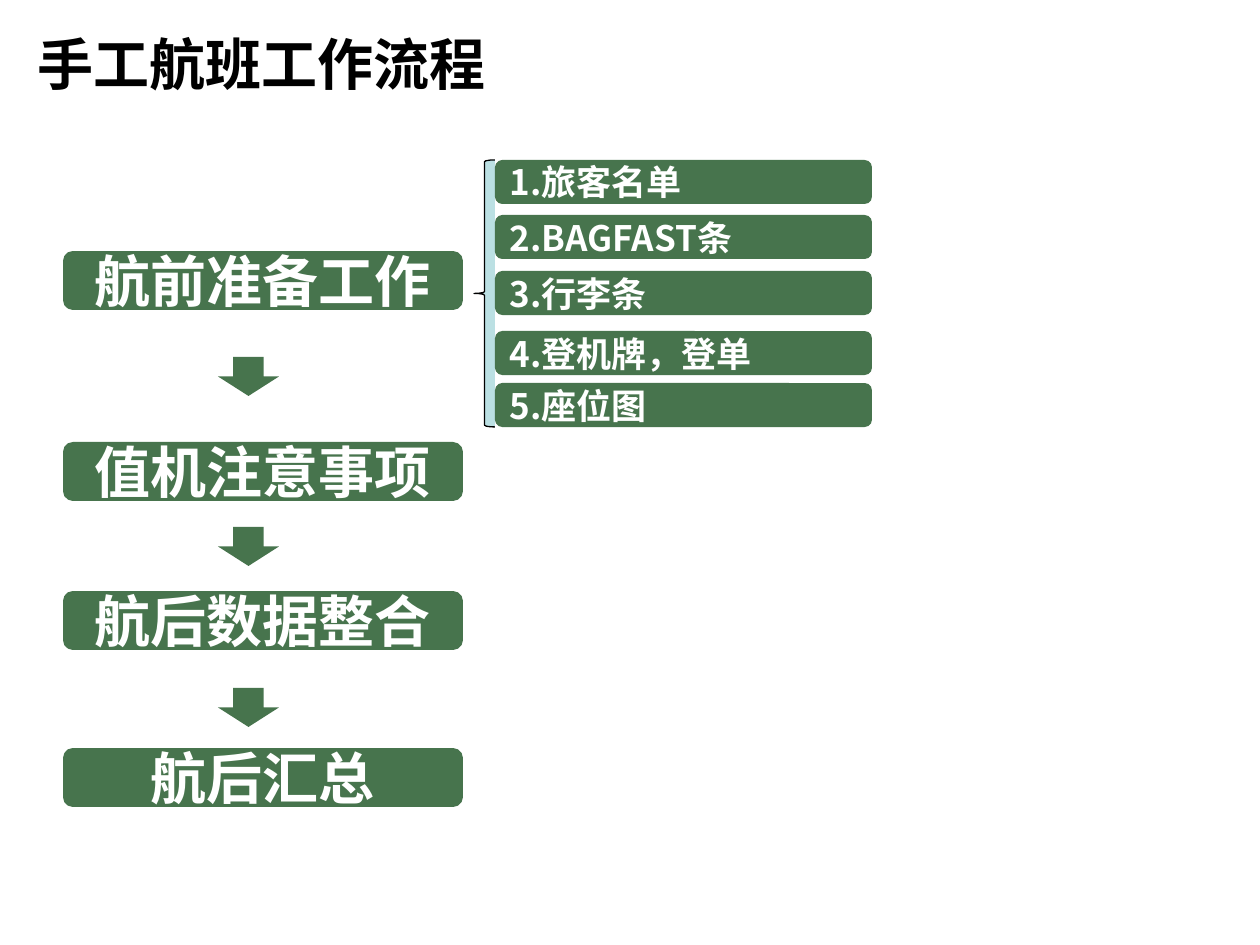
from dataclasses import dataclass

from lxml.etree import SubElement
from pptx import Presentation
from pptx.dml.color import RGBColor
from pptx.enum.shapes import MSO_SHAPE as Shape
from pptx.enum.text import MSO_ANCHOR as Anchor, MSO_AUTO_SIZE as AutoSize, PP_ALIGN as Align
from pptx.oxml.ns import qn
from pptx.util import Emu, Pt

EMU_PER_PX = 914400 / 126
FONT = "Noto Sans CJK SC"
COLORS = {"green": "47744D", "pale": "BBE0E3", "black": "000000", "white": "FFFFFF"}


@dataclass(frozen=True)
class Box:
    left: int
    top: int
    width: int
    height: int


@dataclass(frozen=True)
class Label:
    text: str
    size: int
    color: str = "white"
    align: Align = Align.LEFT
    anchor: Anchor = Anchor.MIDDLE


@dataclass(frozen=True)
class Item:
    text: str
    top: int


TITLE = Label("手工航班工作流程", 32, "black", anchor=Anchor.TOP)
STAGES = [
    Item("航前准备工作", 251),
    Item("值机注意事项", 442),
    Item("航后数据整合", 591),
    Item("航后汇总", 748),
]
ARROW_TOPS = [357, 527, 688]
DOCUMENTS = [
    Item("1.旅客名单", 160),
    Item("2.BAGFAST条", 215),
    Item("3.行李条", 271),
    Item("4.登机牌，登单", 331),
    Item("5.座位图", 383),
]


def px(length: int) -> Emu:
    return Emu(round(length * EMU_PER_PX))


def place(box: Box) -> list[Emu]:
    return [px(length) for length in (box.left, box.top, box.width, box.height)]


def color(name: str) -> RGBColor:
    return RGBColor.from_string(COLORS[name])


def write_label(shape, label: Label) -> None:
    frame = shape.text_frame
    frame.word_wrap = True
    frame.vertical_anchor = label.anchor
    paragraph = frame.paragraphs[0]
    paragraph.alignment = label.align
    run = paragraph.add_run()
    run.text = label.text
    formats = {"name": FONT, "size": Pt(label.size), "bold": True}
    for attribute, value in formats.items():
        setattr(run.font, attribute, value)
    run.font.color.rgb = color(label.color)
    SubElement(run._r.get_or_add_rPr(), qn("a:ea"), typeface=FONT)


def draw_shape(slide, kind: Shape, box: Box, fill: str = "green"):
    shape = slide.shapes.add_shape(kind, *place(box))
    shape.shadow.inherit = False
    shape.fill.solid()
    shape.fill.fore_color.rgb = color(fill)
    shape.line.fill.background()
    return shape


def draw_process(slide, box: Box, label: Label) -> None:
    write_label(draw_shape(slide, Shape.FLOWCHART_ALTERNATE_PROCESS, box), label)


def draw_title(slide, box: Box, label: Label) -> None:
    title = slide.shapes.add_textbox(*place(box))
    write_label(title, label)
    title.text_frame.auto_size = AutoSize.SHAPE_TO_FIT_TEXT


def draw_brace(slide, box: Box) -> None:
    brace = draw_shape(slide, Shape.LEFT_BRACE, box, "pale")
    brace.line.color.rgb = color("black")
    brace.line.width = Pt(0.75)


def main() -> None:
    presentation = Presentation()
    presentation.slide_width = px(1260)
    presentation.slide_height = px(945)
    slide = presentation.slides.add_slide(presentation.slide_layouts[6])

    draw_title(slide, Box(25, 23, 1115, 81), TITLE)
    for stage in STAGES:
        label = Label(stage.text, 32, align=Align.CENTER)
        draw_process(slide, Box(63, stage.top, 400, 59), label)
    for top in ARROW_TOPS:
        draw_shape(slide, Shape.DOWN_ARROW, Box(218, top, 61, 39))
    draw_brace(slide, Box(474, 160, 21, 267))
    for document in DOCUMENTS:
        draw_process(slide, Box(495, document.top, 377, 44), Label(document.text, 20))

    presentation.save("out.pptx")


if __name__ == "__main__":
    main()
